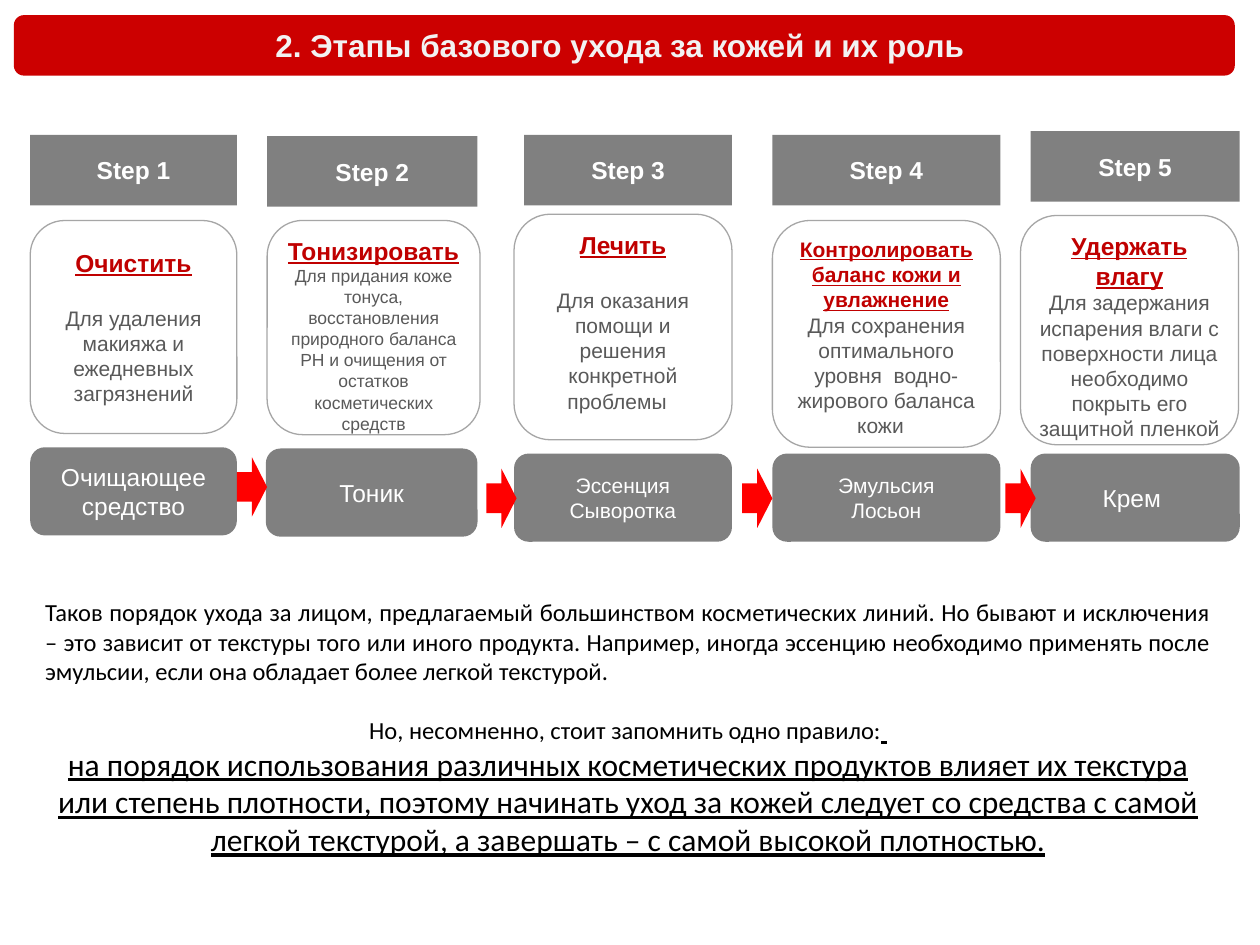
from pptx import Presentation
from pptx.dml.color import RGBColor
from pptx.enum.shapes import MSO_SHAPE
from pptx.enum.text import MSO_ANCHOR, MSO_AUTO_SIZE, PP_ALIGN
from pptx.util import Inches, Pt

GRAY, RED, WHITE = "808080", "C00000", "FFFFFF"


def color(code):
    return RGBColor.from_string(code)


class Deck:
    font = "Arial"
    inset = 0.04

    def __init__(self, wide, high):
        self.file = Presentation()
        self.file.slide_width = Inches(wide)
        self.file.slide_height = Inches(high)
        self.slide = self.file.slides.add_slide(self.file.slide_layouts[6])

    def shape(self, kind, area, fill=None, edge=None):
        item = self.slide.shapes.add_shape(kind, *map(Inches, area))
        item.shadow.inherit = False
        if fill:
            item.fill.solid()
            item.fill.fore_color.rgb = color(fill)
        else:
            item.fill.background()
        if edge:
            item.line.color.rgb = color(edge)
            item.line.width = Pt(0.75)
        else:
            item.line.fill.background()
        return item

    def frame(self, item, top=False, inset=None):
        frame = item.text_frame
        frame.word_wrap = True
        frame.vertical_anchor = MSO_ANCHOR.TOP if top else MSO_ANCHOR.MIDDLE
        side = Inches(self.inset if inset is None else inset)
        frame.margin_left = frame.margin_right = side
        frame.margin_top = frame.margin_bottom = Inches(0.05 if inset else self.inset)
        return frame

    def line(self, frame, text, size, ink, bold=False, under=False,
             gap=0, align=PP_ALIGN.CENTER, font=None):
        first = frame.paragraphs[0]
        para = frame.add_paragraph() if first.runs else first
        para.add_run().text = text
        para.alignment = align
        para.space_before = Pt(gap)
        face = para.font
        face.name = font or self.font
        face.size = Pt(size)
        face.bold = bold
        face.underline = under
        face.color.rgb = color(ink)
        return para

    def label(self, kind, area, lines, size, fill=GRAY, ink=WHITE, bold=False, inset=None):
        frame = self.frame(self.shape(kind, area, fill), inset=inset)
        for text in lines:
            self.line(frame, text, size, ink, bold)

    def card(self, area, head, body, sizes, gap, top):
        item = self.shape(MSO_SHAPE.ROUNDED_RECTANGLE, area, edge="A6A6A6")
        frame = self.frame(item, top)
        self.line(frame, head, sizes[0], RED, True, True)
        self.line(frame, body, sizes[1], "595959", gap=gap)

    def arrow(self, left, top):
        self.shape(MSO_SHAPE.RIGHT_ARROW, (left, top, 0.24, 0.47), "FF0000")

    def note(self, area):
        item = self.slide.shapes.add_textbox(*map(Inches, area))
        frame = self.frame(item, True, 0.1)
        frame.auto_size = MSO_AUTO_SIZE.SHAPE_TO_FIT_TEXT
        return frame

    def save(self):
        self.file.save("out.pptx")


STEPS = [
    ((0.24, 1.07, 1.64), (0.24, 1.75, 1.64, 1.69), (0.24, 3.55, 1.64),
     "Очистить", "Для удаления макияжа и ежедневных загрязнений",
     (14, 12), 16, ["Очищающее средство"], 14),
    ((2.12, 1.08, 1.67), (2.12, 1.75, 1.69, 1.7), (2.11, 3.56, 1.68),
     "Тонизировать",
     "Для придания коже тонуса, восстановления природного баланса PH "
     "и очищения от остатков косметических средств",
     (14, 10), 0, ["Тоник"], 14),
    ((4.16, 1.07, 1.65), (4.08, 1.7, 1.73, 1.79), (4.08, 3.6, 1.73),
     "Лечить", "Для оказания помощи и решения конкретной проблемы  ",
     (14, 12), 16, ["Эссенция", "Сыворотка"], 12),
    ((6.13, 1.07, 1.81), (6.13, 1.75, 1.81, 1.8), (6.13, 3.6, 1.81),
     "Контролировать баланс кожи и увлажнение",
     "Для сохранения оптимального уровня  водно-жирового баланса кожи  ",
     (12, 12), 0, ["Эмульсия", "Лосьон"], 12),
    ((8.18, 1.04, 1.66), (8.1, 1.71, 1.73, 1.82), (8.18, 3.6, 1.66),
     "Удержать влагу",
     "Для задержания испарения влаги с поверхности лица "
     "необходимо покрыть его защитной пленкой",
     (14, 12), 0, ["Крем "], 14),
]


def main():
    deck = Deck(10, 7.5)
    deck.label(MSO_SHAPE.ROUNDED_RECTANGLE, (0.11, 0.12, 9.69, 0.48),
               ["2. Этапы базового ухода за кожей и их роль "],
               18, "CC0000", "F2F2F2", True, 0.1)

    for rank, step in enumerate(STEPS, 1):
        tab, box, base, head, body, sizes, gap, goods, size = step
        deck.label(MSO_SHAPE.RECTANGLE, (*tab, 0.56), [f"Step {rank}"], 14, bold=True)
        deck.card(box, head, body, sizes, gap, rank > 1)
        deck.label(MSO_SHAPE.ROUNDED_RECTANGLE, (*base, 0.7), goods, size)

    note = deck.note((0.26, 4.69, 9.45, 2.19))
    deck.line(note,
              "Таков порядок ухода за лицом, предлагаемый большинством косметических "
              "линий. Но бывают и исключения – это зависит от текстуры того или иного "
              "продукта. Например, иногда эссенцию необходимо применять после эмульсии, "
              "если она обладает более легкой текстурой. ",
              14, "000000", align=PP_ALIGN.JUSTIFY, font="Calibri")
    rule = deck.line(note, "Но, несомненно, стоит запомнить одно правило:",
                     14, "000000", gap=17, font="Calibri")
    tail = rule.add_run()
    tail.text = " "
    tail.font.underline = True
    deck.line(note,
              "на порядок использования различных косметических продуктов влияет их "
              "текстура или степень плотности, поэтому начинать уход за кожей следует "
              "со средства с самой легкой текстурой, а завершать – с самой высокой "
              "плотностью.",
              18, "000000", under=True, font="Calibri")

    for left, top in [(1.88, 3.63), (3.86, 3.72), (5.89, 3.72), (7.98, 3.72)]:
        deck.arrow(left, top)
    deck.save()


if __name__ == "__main__":
    main()
